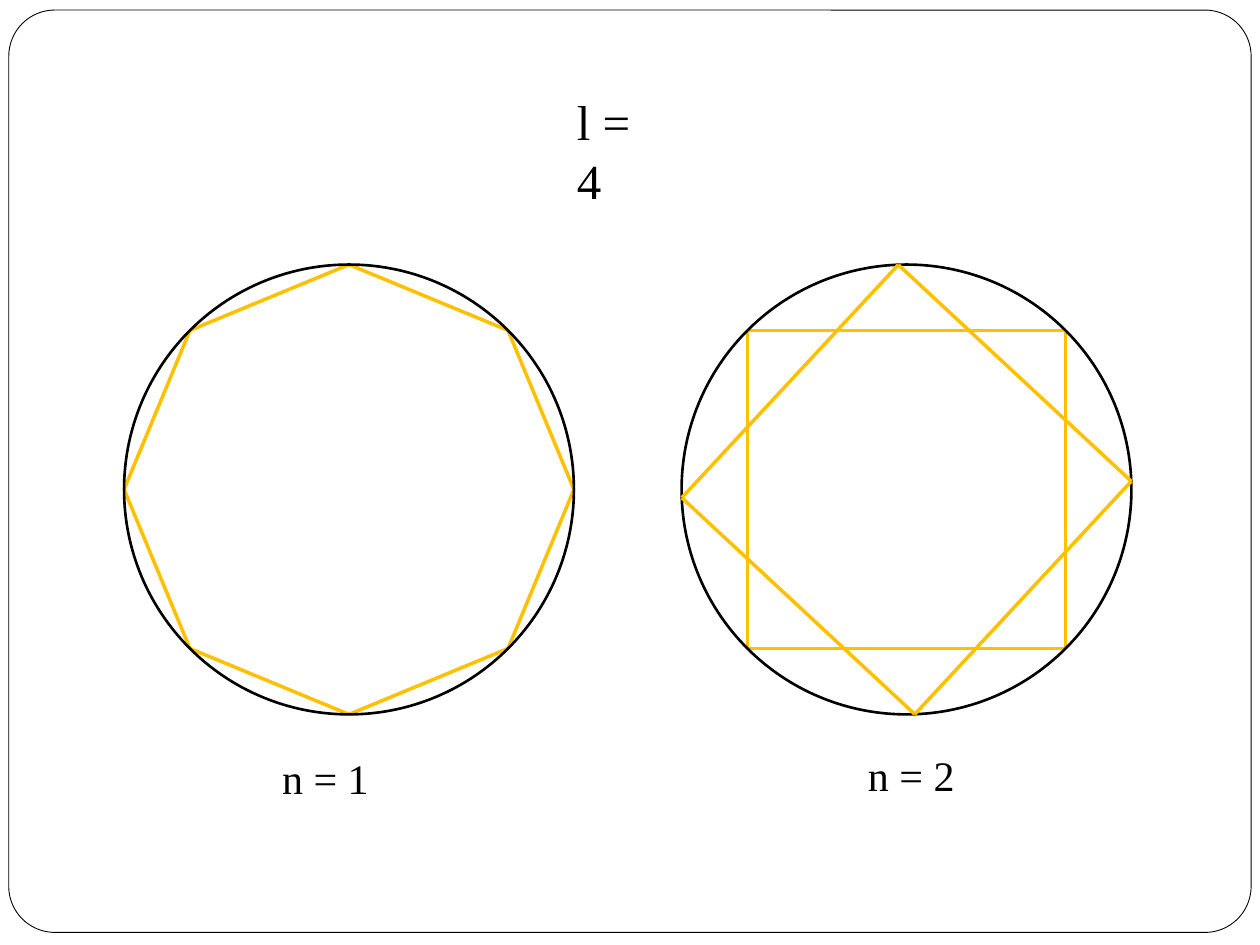
import math

from lxml import etree
from pptx import Presentation
from pptx import util as u
from pptx.dml.color import RGBColor
from pptx.enum import shapes, text
from pptx.oxml.ns import qn

COLORS = {"paper": "FFFFFF", "ink": "000000", "chord": "FFC000"}
FONT = "Times New Roman"
COLUMNS, ROWS = 100, 75  # grid of the slide, in square cells


def write(paragraph, content, size=24, color="ink", font=FONT):
    """Add one formatted run to a paragraph."""
    run = paragraph.add_run()
    run.text = content
    run.font.size = u.Pt(size)
    run.font.name = font
    run.font.color.rgb = RGBColor.from_string(COLORS[color])


class Sheet:
    """Holds the style and the current slide; lengths are grid cells."""

    def __init__(self, presentation):
        self.cell_width = presentation.slide_width / COLUMNS
        self.cell_height = presentation.slide_height / ROWS
        self.slide = presentation.slides.add_slide(presentation.slide_layouts[6])

    def place(self, column, row):
        return round(column * self.cell_width), round(row * self.cell_height)

    def group(self):
        return self.slide.shapes.add_group_shape()

    def outline(self, kind, left, top, width, height, weight, fill=None, parent=None):
        shape = (parent or self.slide).shapes.add_shape(
            kind, *self.place(left, top), *self.place(width, height))
        shape.shadow.inherit = False
        if fill:
            shape.fill.solid()
            shape.fill.fore_color.rgb = RGBColor.from_string(COLORS[fill])
        else:
            shape.fill.background()
        shape.line.color.rgb = RGBColor.from_string(COLORS["ink"])
        shape.line.width = u.Pt(weight)
        return shape

    def circle(self, center, radius, parent):
        left, top = (value - radius for value in center)
        self.outline(shapes.MSO_SHAPE.OVAL, left, top, 2 * radius, 2 * radius, 1.5,
                     parent=parent)

    def chord(self, start, end, parent):
        line = parent.shapes.add_connector(
            shapes.MSO_CONNECTOR.STRAIGHT, *self.place(*start), *self.place(*end))
        line.line.color.rgb = RGBColor.from_string(COLORS["chord"])
        line.line.width = u.Pt(2)
        etree.SubElement(line._element.spPr, qn("a:effectLst"))

    def polygon(self, center, radius, sides, turn, parent):
        """Join equally spaced points of a circle; turn is in degrees from the top."""
        angles = [math.radians(turn + 360 * i / sides) for i in range(sides)]
        points = [(center[0] + radius * math.sin(angle),
                   center[1] - radius * math.cos(angle)) for angle in angles]
        for start, end in zip(points, points[1:] + points[:1]):
            self.chord(start, end, parent)

    def label(self, content, left, top, width, height, size=24):
        box = self.slide.shapes.add_textbox(
            *self.place(left, top), *self.place(width, height))
        frame = box.text_frame
        frame.word_wrap = False
        frame.auto_size = text.MSO_AUTO_SIZE.SHAPE_TO_FIT_TEXT
        write(frame.paragraphs[0], content, size=size)


def main():
    presentation = Presentation()
    presentation.slide_width, presentation.slide_height = u.Inches(10), u.Inches(7.5)
    sheet = Sheet(presentation)

    # Rounded frame
    frame = sheet.outline(shapes.MSO_SHAPE.ROUNDED_RECTANGLE,
                          0.7, 0.8, 98.6, 73.2, 0.5, fill="paper")
    frame.adjustments[0] = 0.05

    radius = 17.85
    octagon_center, star_center = (27.7, 38.85), (71.95, 38.85)

    # n = 1: regular octagon in its circle
    octagon = sheet.group()
    sheet.polygon(octagon_center, radius, 8, 0, octagon)
    sheet.circle(octagon_center, radius, octagon)

    # n = 2: two squares in their circle, one slightly tilted
    star = sheet.group()
    sheet.polygon(star_center, radius, 4, 45, star)
    sheet.circle(star_center, radius, star)
    sheet.polygon(star_center, radius, 4, -2.1, star)

    # Heading and captions
    sheet.label("l = 4", 44.8, 6.8, 9.1, 5.7, size=28)
    sheet.label("n = 1", 21.4, 59.2, 8.9, 5)
    sheet.label("n = 2", 67.9, 59, 8.9, 5)

    presentation.save("out.pptx")


if __name__ == "__main__":
    main()
